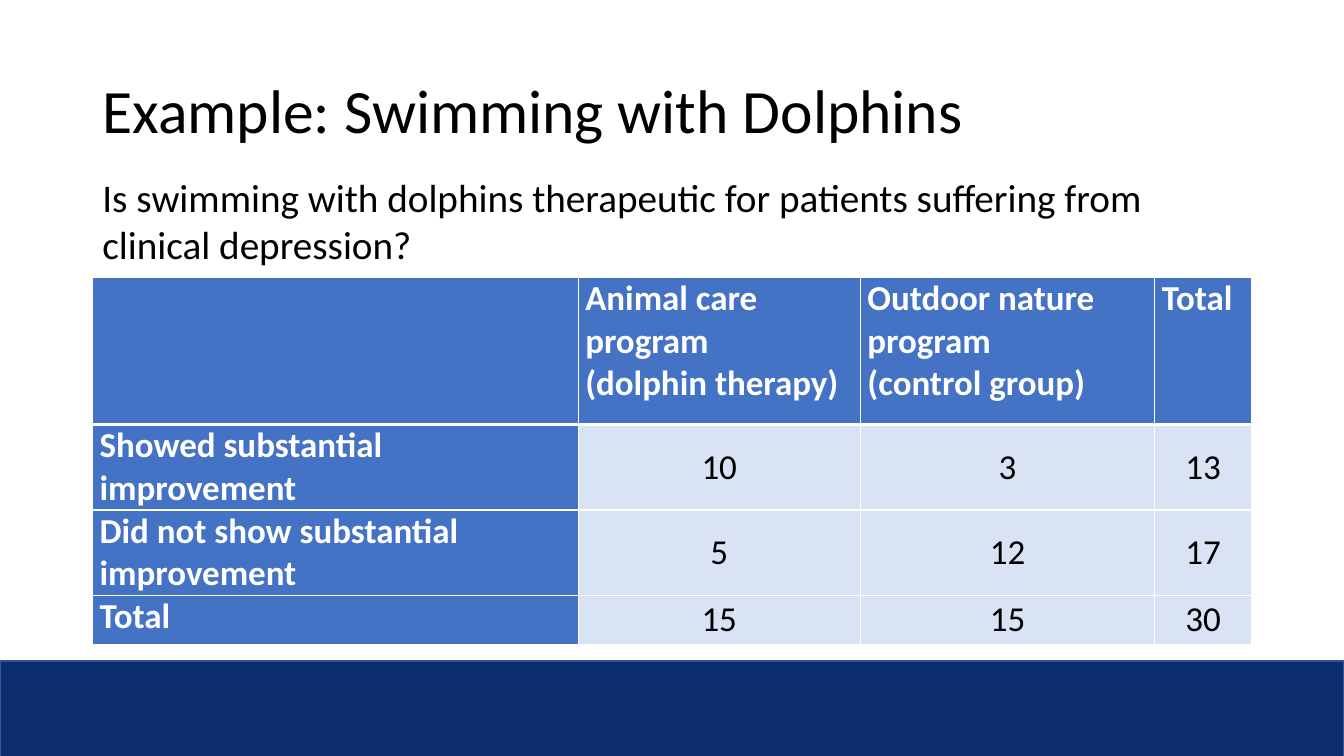
"""Build the dolphin therapy example slide with its two-way table."""
from dataclasses import dataclass

from lxml import etree
from pptx import Presentation
from pptx.dml.color import RGBColor
from pptx.enum.shapes import MSO_SHAPE
from pptx.enum.text import MSO_ANCHOR, MSO_AUTO_SIZE, PP_ALIGN
from pptx.oxml.ns import qn
from pptx.util import Cm, Pt

RECT = MSO_SHAPE.RECTANGLE
TOP, MIDDLE = MSO_ANCHOR.TOP, MSO_ANCHOR.MIDDLE
LEFT, CENTER = PP_ALIGN.LEFT, PP_ALIGN.CENTER
NO_FIT, GROW = MSO_AUTO_SIZE.NONE, MSO_AUTO_SIZE.SHAPE_TO_FIT_TEXT
TITLE_ONLY = 5

MARGIN, CONTENT_W = 2.33, 29.21
COLUMN_WIDTHS = (12.24, 7.11, 7.42, 2.44)
ROW_HEIGHTS = (3.71, 2.15, 2.15, 1.24)
ROWS = (
    ("", "Animal care program\n(dolphin therapy)",
     "Outdoor nature program\n(control group)", "Total"),
    ("Showed substantial improvement", "10", "3", "13"),
    ("Did not show substantial improvement", "5", "12", "17"),
    ("Total", "15", "15", "30"),
)


@dataclass(frozen=True)
class Theme:
    font: str = "Calibri"
    title_size: int = 44
    body_size: int = 28
    table_size: int = 25
    text: str = "000000"
    light: str = "FFFFFF"
    band: str = "0D2C6C"
    band_line: str = "325491"
    header: str = "4472C4"
    value: str = "DAE3F3"


class Deck:
    def __init__(self, theme):
        self.theme = theme
        self.prs = Presentation()
        self.prs.slide_width, self.prs.slide_height = Cm(33.87), Cm(19.05)
        self.s = self.prs.slides.add_slide(self.prs.slide_layouts[TITLE_ONLY])

    def style(self, tf, size, color, bold=False, align=LEFT):
        for p in tf.paragraphs:
            p.alignment = align
            p.font.name = self.theme.font
            p.font.size = Pt(size)
            p.font.bold = bold
            p.font.color.rgb = RGBColor.from_string(color)

    def band(self, top, height):
        sp = self.s.shapes.add_shape(RECT, 0, Cm(top), self.prs.slide_width, Cm(height))
        sp.shadow.inherit = False
        sp.fill.solid()
        sp.fill.fore_color.rgb = RGBColor.from_string(self.theme.band)
        sp.line.color.rgb = RGBColor.from_string(self.theme.band_line)
        sp.line.width = Pt(1)

    def title(self, text, top, height):
        sp = self.s.shapes.title
        sp.left, sp.top = Cm(MARGIN), Cm(top)
        sp.width, sp.height = Cm(CONTENT_W), Cm(height)
        tf = sp.text_frame
        tf.text = text
        tf.auto_size, tf.vertical_anchor = NO_FIT, MIDDLE
        tf.paragraphs[0].line_spacing = 0.9
        self.style(tf, self.theme.title_size, self.theme.text)

    def text(self, text, top, height):
        sp = self.s.shapes.add_textbox(Cm(MARGIN), Cm(top), Cm(CONTENT_W), Cm(height))
        tf = sp.text_frame
        tf.word_wrap, tf.auto_size = True, GROW
        tf.text = text
        self.style(tf, self.theme.body_size, self.theme.text)

    def borders(self, cell, top, bottom):
        tc_pr = cell._tc.get_or_add_tcPr()
        for side, width in (("L", 1), ("R", 1), ("T", top), ("B", bottom)):
            ln = etree.SubElement(tc_pr, qn(f"a:ln{side}"), w=str(Pt(width)))
            fill = etree.SubElement(ln, qn("a:solidFill"))
            etree.SubElement(fill, qn("a:srgbClr"), val=self.theme.light)

    def cell(self, cell, text, row, col):
        is_header = row == 0 or col == 0
        t = self.theme
        self.borders(cell, 3 if row == 1 else 1, 3 if row == 0 else 1)
        cell.fill.solid()
        cell.fill.fore_color.rgb = RGBColor.from_string(t.header if is_header else t.value)
        cell.margin_left = cell.margin_right = Cm(0.18)
        cell.margin_top = cell.margin_bottom = 0
        cell.vertical_anchor = TOP if is_header else MIDDLE
        cell.text_frame.text = text
        self.style(cell.text_frame, t.table_size, t.light if is_header else t.text,
                   is_header, LEFT if is_header else CENTER)

    def table(self, rows, widths, heights, top):
        table = self.s.shapes.add_table(
            len(rows), len(widths), Cm(MARGIN), Cm(top),
            Cm(sum(widths)), Cm(sum(heights))).table
        for column, width in zip(table.columns, widths):
            column.width = Cm(width)
        for i, (values, height) in enumerate(zip(rows, heights)):
            table.rows[i].height = Cm(height)
            for j, value in enumerate(values):
                self.cell(table.cell(i, j), value, i, j)


def main():
    deck = Deck(Theme())
    deck.band(16.66, 3.05)
    deck.title("Example: Swimming with Dolphins", 1.02, 3.68)
    deck.table(ROWS, COLUMN_WIDTHS, ROW_HEIGHTS, 6.99)
    deck.text("Is swimming with dolphins therapeutic for patients suffering from "
              "clinical depression?", 4.24, 2.64)
    deck.prs.save("out.pptx")


if __name__ == "__main__":
    main()
